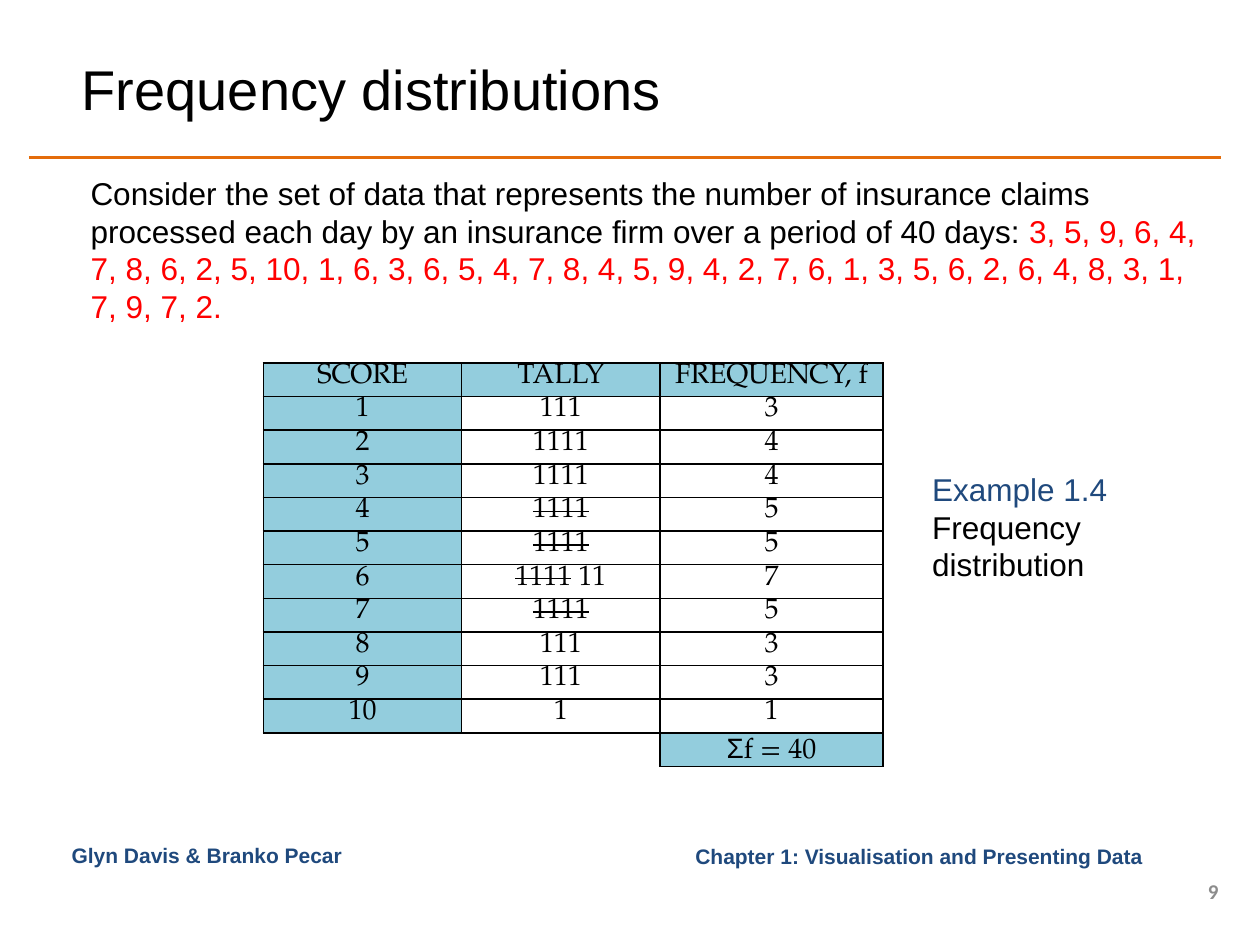
from lxml.etree import SubElement
from pptx import Presentation
from pptx.dml.color import RGBColor
from pptx.enum.shapes import MSO_CONNECTOR
from pptx.enum.text import MSO_ANCHOR, PP_ALIGN
from pptx.oxml.ns import qn
from pptx.util import Inches, Pt

BLACK = RGBColor(0, 0, 0)
RED = RGBColor(0xFF, 0, 0)
NAVY = RGBColor(0x1F, 0x49, 0x7D)
GREY = RGBColor(0x8C, 0x8C, 0x8C)
ORANGE = RGBColor(0xE4, 0x6C, 0x0A)
SKY = RGBColor(0x93, 0xCD, 0xDD)
SANS, SERIF = "Arial", "TeX Gyre Pagella"

CLAIMS = ("3, 5, 9, 6, 4, 7, 8, 6, 2, 5, 10, 1, 6, 3, 6, 5, 4, 7, 8, 4, "
          "5, 9, 4, 2, 7, 6, 1, 3, 5, 6, 2, 6, 4, 8, 3, 1, 7, 9, 7, 2.")
HEADINGS = ["SCORE", "TALLY", "FREQUENCY, f"]
FREQUENCIES = [3, 4, 4, 5, 5, 7, 5, 3, 3, 1]


def add_run(p, text, size, color, font=SANS, bold=False, strike=False):
    r = p.add_run()
    r.text = text
    r.font.size = Pt(size)
    r.font.name = font
    r.font.bold = bold
    r.font.color.rgb = color
    if strike:
        r.font._element.set("strike", "sngStrike")


def add_text(s, box, paragraphs, size, font=SANS, bold=False,
             align=PP_ALIGN.LEFT, anchor=MSO_ANCHOR.TOP):
    tf = s.shapes.add_textbox(*map(Inches, box)).text_frame
    tf.word_wrap = True
    tf.vertical_anchor = anchor
    for i, runs in enumerate(paragraphs):
        p = tf.add_paragraph() if i else tf.paragraphs[0]
        p.alignment = align
        for text, color in runs:
            add_run(p, text, size, color, font, bold)


def add_header(s, box):
    x, y, w, h = box
    line = s.shapes.add_connector(MSO_CONNECTOR.STRAIGHT, Inches(x), Inches(y + h),
                                  Inches(x + w), Inches(y + h))
    line.line.color.rgb = ORANGE
    line.line.width = Pt(2)
    SubElement(line._element.spPr, qn("a:effectLst"))
    add_text(s, (x + 0.32, y + 0.31, 7.58, 0.78),
             [[("Frequency distributions", BLACK)]], 32, anchor=MSO_ANCHOR.MIDDLE)


def set_borders(cell, sides):
    tcPr = cell._tc.get_or_add_tcPr()
    for side in "LRTB":
        ln = SubElement(tcPr, qn(f"a:ln{side}"), w=str(Pt(1)))
        if side in sides:
            fill = SubElement(ln, qn("a:solidFill"))
            SubElement(fill, qn("a:srgbClr"), val=str(BLACK))
        else:
            SubElement(ln, qn("a:noFill"))


def tally(count):
    if count < 5:
        return [("1" * count, False)]
    rest = [(" " + "1" * (count - 5), False)] if count > 5 else []
    return [("1111", True)] + rest


def fill_cell(cell, runs, shaded, sides):
    set_borders(cell, sides)
    cell.margin_left = cell.margin_right = Inches(0.07)
    cell.margin_top = cell.margin_bottom = 0
    if shaded:
        cell.fill.solid()
        cell.fill.fore_color.rgb = SKY
    else:
        cell.fill.background()
    p = cell.text_frame.paragraphs[0]
    p.alignment = PP_ALIGN.CENTER
    for text, strike in runs:
        add_run(p, text, 16, BLACK, SANS if text == "Σ" else SERIF, strike=strike)
    if not runs:
        SubElement(p._p, qn("a:endParaRPr"), sz="1600")


def add_frequency_table(s, box):
    rows = [[[(text, False)] for text in HEADINGS]]
    rows += [[[(str(score), False)], tally(count), [(str(count), False)]]
             for score, count in enumerate(FREQUENCIES, 1)]
    rows.append([[], [], [("Σ", False), (f"f = {sum(FREQUENCIES)}", False)]])
    x, y, w, h = box
    table = s.shapes.add_table(len(rows), len(HEADINGS), *map(Inches, box)).table
    table.first_row = table.horz_banding = False
    for column, share in zip(table.columns, (0.32, 0.32, 0.36)):
        column.width = Inches(w * share)
    last = len(rows) - 1
    for i, row in enumerate(rows):
        table.rows[i].height = Inches(h / len(rows))
        for j, runs in enumerate(row):
            shaded = bool(runs) and (i in (0, last) or j == 0)
            sides = "LRTB" if runs else "TR" if j == 1 else "T"
            fill_cell(table.cell(i, j), runs, shaded, sides)


def add_footer(s, box):
    x, y, w, h = box
    add_text(s, (x, y, 2.97, h), [[("Glyn Davis & Branko Pecar", NAVY)]], 12, bold=True)
    add_text(s, (x + 4.22, y, 4.48, h),
             [[("Chapter 1: Visualisation and Presenting Data", NAVY)]], 12,
             bold=True, align=PP_ALIGN.RIGHT, anchor=MSO_ANCHOR.MIDDLE)
    add_text(s, (x + w - 0.47, y + h, 0.47, 0.24), [[("9", GREY)]], 12, "Calibri",
             True, PP_ALIGN.RIGHT, MSO_ANCHOR.MIDDLE)


def main():
    prs = Presentation()
    prs.slide_width, prs.slide_height = Inches(10), Inches(7.5)
    s = prs.slides.add_slide(prs.slide_layouts[6])
    add_header(s, (0.23, 0, 9.46, 1.25))
    add_text(s, (0.62, 1.33, 8.98, 1.31), [[
        ("Consider the set of data that represents the number of insurance claims "
         "processed each day by an insurance firm over a period of 40 days: ", BLACK),
        (CLAIMS, RED)]], 18)
    add_frequency_table(s, (2.09, 2.88, 4.92, 3.2))
    add_text(s, (7.3, 3.68, 1.64, 1.01),
             [[("Example 1.4", NAVY)], [("Frequency distribution", BLACK)]], 18)
    add_footer(s, (0.47, 6.64, 9.3, 0.31))
    prs.save("out.pptx")


if __name__ == "__main__":
    main()
